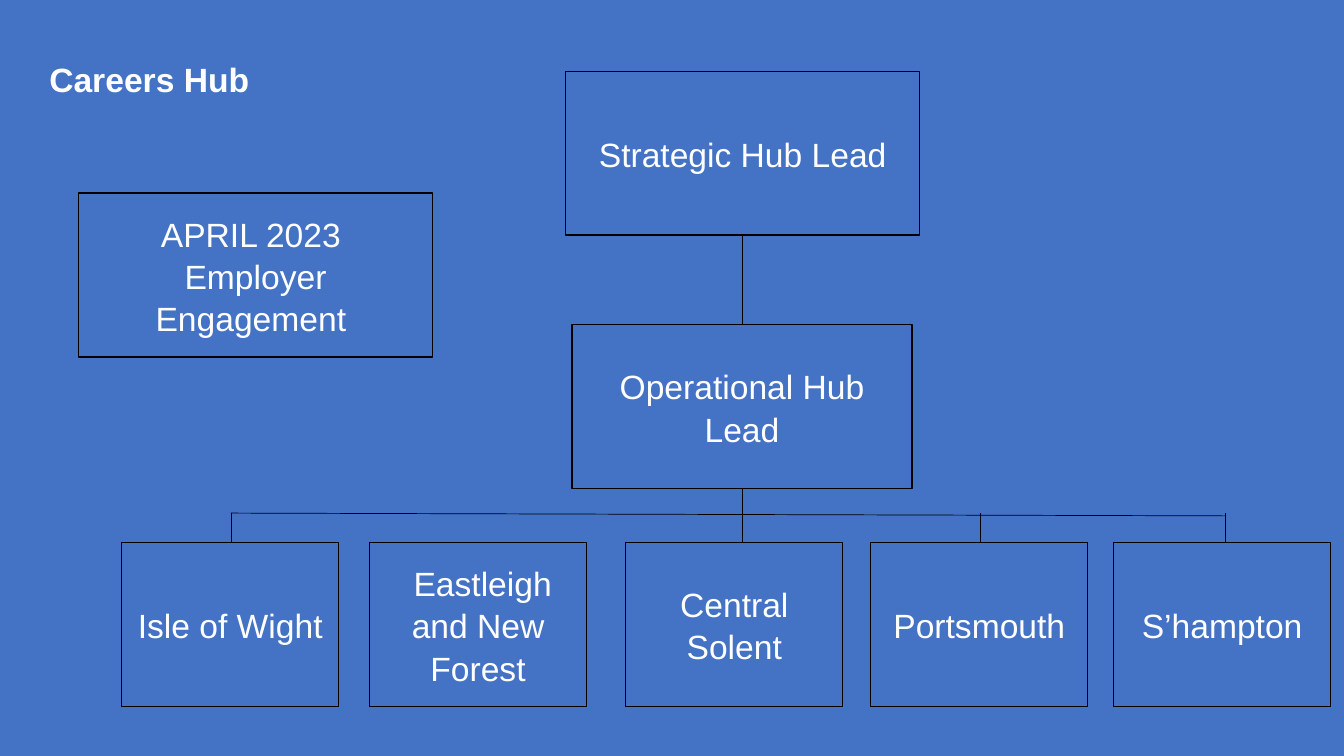
import pptx
import pptx.dml.color
import pptx.enum.shapes
import pptx.enum.text
import pptx.oxml
import pptx.oxml.ns
import pptx.util
from pptx.util import Pt

BLUE, WHITE, BLACK = "4472C4", "FFFFFF", "000000"
BOX_HEIGHT = 117


def paint(target, colour):
    """Give a fill or a line a solid colour."""
    target.solid()
    target.fore_color.rgb = pptx.dml.color.RGBColor.from_string(colour)


def write(frame, text, align=None, bold=False, spacing=1.05, size=24, colour=WHITE, font="Arial"):
    """Write one paragraph for each line of text."""
    frame.word_wrap = True
    frame.vertical_anchor = pptx.enum.text.MSO_ANCHOR.MIDDLE
    for index, words in enumerate(text.split("\n")):
        para = frame.add_paragraph() if index else frame.paragraphs[0]
        para.alignment = align
        para.line_spacing = spacing
        para.space_before = Pt(0)
        span = para.add_run()
        span.text = words
        span.font.name = font
        span.font.size = Pt(size)
        span.font.bold = bold
        paint(span.font.fill, colour)


class HubChart:
    def __init__(self, deck):
        self.fill, self.line = BLUE, BLACK
        self.page = deck.slides.add_slide(deck.slide_layouts[5])
        paint(self.page.background.fill, self.fill)

    def title(self, text, left, top, width, height):
        title = self.page.shapes.title
        title.left, title.top = Pt(left), Pt(top)
        title.width, title.height = Pt(width), Pt(height)
        write(title.text_frame, text, bold=True, spacing=1.1,
              align=pptx.enum.text.PP_ALIGN.LEFT)

    def box(self, text, left, top, width):
        box = self.page.shapes.add_shape(
            pptx.enum.shapes.MSO_SHAPE.RECTANGLE,
            Pt(left), Pt(top), Pt(width), Pt(BOX_HEIGHT))
        box.shadow.inherit = False
        paint(box.fill, self.fill)
        paint(box.line.fill, self.line)
        box.line.width = Pt(1)
        write(box.text_frame, text, align=pptx.enum.text.PP_ALIGN.CENTER)

    def link(self, start_x, start_y, end_x, end_y):
        link = self.page.shapes.add_connector(
            pptx.enum.shapes.MSO_CONNECTOR.STRAIGHT,
            Pt(start_x), Pt(start_y), Pt(end_x), Pt(end_y))
        paint(link.line.fill, self.line)
        link.line.width = Pt(0.5)
        properties = link._element.spPr
        properties.append(pptx.oxml.parse_xml(
            "<a:effectLst %s/>" % pptx.oxml.ns.nsdecls("a")))


def main():
    deck = pptx.Presentation()
    deck.slide_width, deck.slide_height = Pt(960), Pt(540)
    chart = HubChart(deck)
    chart.title("Careers Hub", 28, 32.4, 348, 44.6)

    # Leads
    strategic_top, operational_top, area_top = 51, 232, 387.5
    middle = 530
    chart.box("Strategic Hub Lead", 404, strategic_top, 253)
    chart.box("Operational Hub Lead", 408.5, operational_top, 243)

    # Areas, each with the place of its drop line if it has one
    areas = [
        ("Isle of Wight", 87, 165),
        (" Eastleigh and New Forest", 264, None),
        ("Central Solent", 447, middle),
        ("Portsmouth", 622, 700),
        ("S’hampton", 795.5, 875),
    ]
    rail_start, rail_end = 366.5, 368.5
    for name, left, drop in areas:
        chart.box(name, left, area_top, 155)
        if drop:
            chart.link(drop, rail_start, drop, area_top)

    # Links between the levels
    chart.link(middle, strategic_top + BOX_HEIGHT, middle, operational_top)
    chart.link(middle, operational_top + BOX_HEIGHT, middle, rail_start)
    chart.link(areas[0][2], rail_start, areas[-1][2], rail_end)

    # Date note
    chart.box("APRIL 2023 \nEmployer Engagement ", 56, 138, 253)

    deck.save("out.pptx")


if __name__ == "__main__":
    main()
